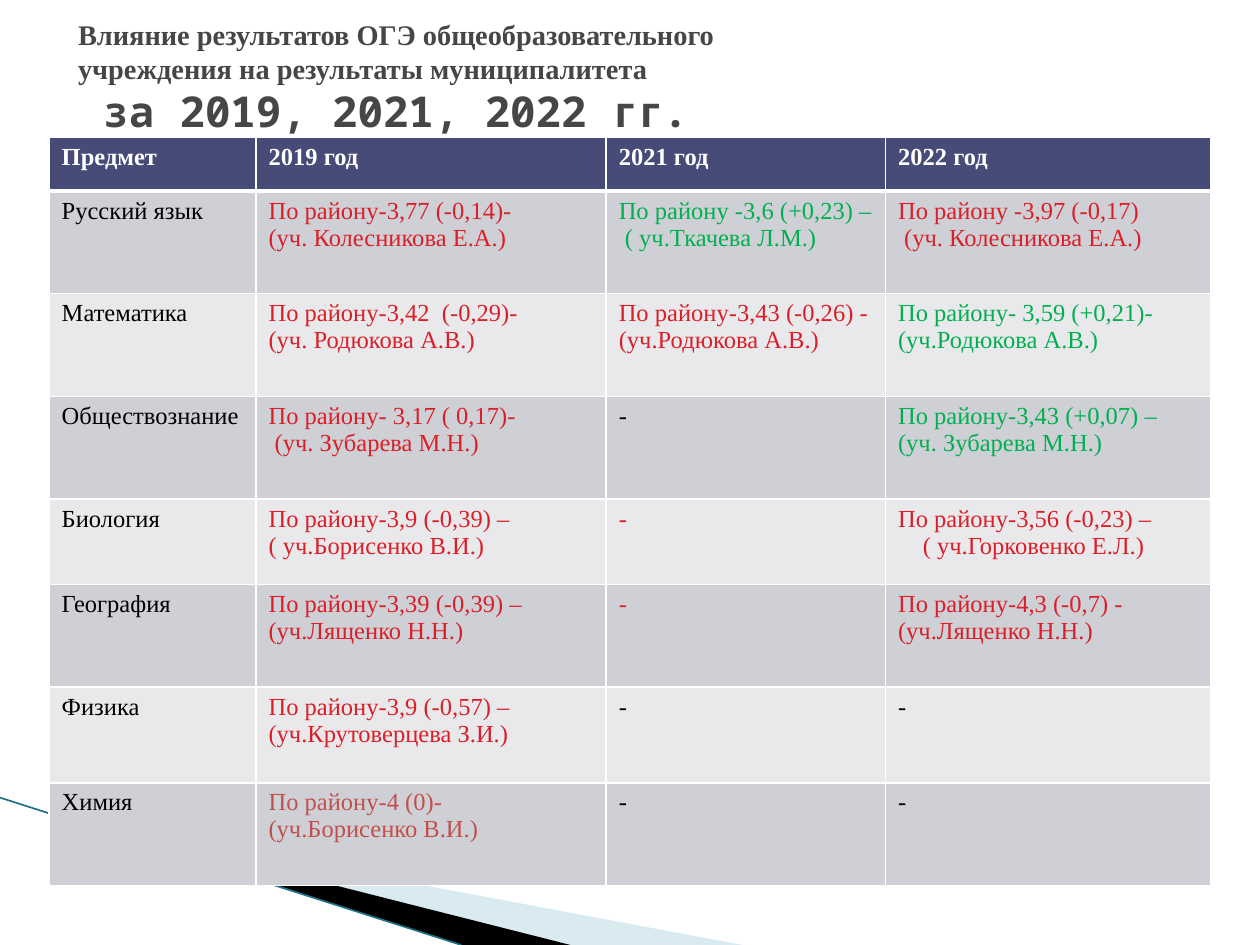
"""Builds a slide with exam results by subject for 2019, 2021 and 2022."""
from lxml import etree
from pptx import Presentation
from pptx.dml.color import RGBColor
from pptx.enum import shapes, text
from pptx.oxml.ns import qn
from pptx.util import Cm, Pt

WHITE = RGBColor(0xFF, 0xFF, 0xFF)
BLACK = RGBColor(0, 0, 0)
RED = RGBColor(0xDA, 0x1F, 0x28)
GREEN = RGBColor(0x00, 0xB0, 0x50)
BRICK = RGBColor(0xC0, 0x50, 0x4D)
GREY = RGBColor(0x46, 0x46, 0x46)
NAVY = RGBColor(0x47, 0x4B, 0x78)
BANDS = RGBColor(0xE9, 0xE9, 0xEC), RGBColor(0xCF, 0xD0, 0xD6)
SKY = RGBColor(0xA0, 0xCB, 0xDC)
TEAL = RGBColor(0x1E, 0x71, 0x86)
SERIF, MONO = "Times New Roman", "Noto Sans Mono"

NONE = ("-", BLACK)
RED_NONE = ("-", RED)
ROWS = [
    [(t, WHITE) for t in ("Предмет", "2019 год", "2021 год", "2022 год")],
    [("Русский язык", BLACK),
     ("По району-3,77 (-0,14)-\n(уч. Колесникова Е.А.)", RED),
     ("По району -3,6 (+0,23) –\n ( уч.Ткачева Л.М.)", GREEN),
     ("По району -3,97 (-0,17)\n (уч. Колесникова Е.А.)", RED)],
    [("Математика", BLACK),
     ("По району-3,42  (-0,29)-\n(уч. Родюкова А.В.)", RED),
     ("По району-3,43 (-0,26) - (уч.Родюкова А.В.)", RED),
     ("По району- 3,59 (+0,21)-(уч.Родюкова А.В.)", GREEN)],
    [("Обществознание", BLACK),
     ("По району- 3,17 ( 0,17)-\n (уч. Зубарева М.Н.)", RED),
     NONE,
     ("По району-3,43 (+0,07) –\n(уч. Зубарева М.Н.)", GREEN)],
    [("Биология", BLACK),
     ("По району-3,9 (-0,39) –\n( уч.Борисенко В.И.)", RED),
     RED_NONE,
     ("По району-3,56 (-0,23) –\n( уч.Горковенко Е.Л.)", RED)],
    [("География", BLACK),
     ("По району-3,39 (-0,39) – (уч.Лященко Н.Н.)", RED),
     RED_NONE,
     ("По району-4,3 (-0,7) -(уч.Лященко Н.Н.)", RED)],
    [("Физика", BLACK),
     ("По району-3,9 (-0,57) – (уч.Крутоверцева З.И.)", RED), NONE, NONE],
    [("Химия", BLACK),
     ("По району-4 (0)- (уч.Борисенко В.И.)", BRICK), NONE, NONE],
]
COLS = 4.17, 7.06, 5.63, 6.55
HEIGHTS = 1.08, 2.07, 2.07, 2.07, 1.72, 2.07, 1.93, 2.07


def style(p, **fmt):
    for name, value in fmt.items():
        if name == "color":
            p.font.color.rgb = value
        else:
            setattr(p.font, name, value)


def border(cell, side, width):
    ln = etree.SubElement(cell._tc.get_or_add_tcPr(), qn("a:" + side), w=str(Pt(width)))
    fill = etree.SubElement(ln, qn("a:solidFill"))
    etree.SubElement(fill, qn("a:srgbClr"), val=str(WHITE))


prs = Presentation()
prs.slide_width, prs.slide_height = Cm(25.4), Cm(19.05)
s = prs.slides.add_slide(prs.slide_layouts[5])

WEDGES = [
    (SKY, 40, (1.98, 13.89, 10.57, 4.01), [(1.4, 16.51), (14.97, 19.05), (11.48, 19.05)]),
    (BLACK, 100, (-0.15, 16.08, 10.57, 2.34), [(1.35, 16.48), (11.5, 19.05), (9.3, 19.05)]),
]
for color, alpha, box, points in WEDGES:
    points = [(Cm(x), Cm(y)) for x, y in points]
    fb = s.shapes.build_freeform(*points[0])
    fb.add_line_segments(points[1:])
    sp = fb.convert_to_shape()
    sp.shadow.inherit = False
    sp.fill.solid()
    sp.fill.fore_color.rgb = color
    sp.line.fill.background()
    clr = sp._element.spPr.find(qn("a:solidFill"))[0]
    etree.SubElement(clr, qn("a:alpha"), val=str(alpha * 1000))
    sp.left, sp.top, sp.width, sp.height = [Cm(v) for v in box]
    outline = next(sp._element.iter(qn("a:path")))
    outline.set("w", str(sp.width))
    outline.set("h", str(sp.height))
    for pt, (x, y) in zip(outline.iter(qn("a:pt")), points):
        pt.set("x", str(x - sp.left))
        pt.set("y", str(y - sp.top))

cn = s.shapes.add_connector(shapes.MSO_CONNECTOR.STRAIGHT, Cm(0), Cm(16.08), Cm(9.3), Cm(19.05))
cn.line.color.rgb = TEAL
cn.line.width = Pt(0.95)
etree.SubElement(cn._element.spPr, qn("a:effectLst"))

tbl = s.shapes.add_table(len(ROWS), len(COLS), Cm(0.99), Cm(2.77),
                         Cm(sum(COLS)), Cm(sum(HEIGHTS))).table
for col, width in zip(tbl.columns, COLS):
    col.width = Cm(width)
for i, (row, height) in enumerate(zip(ROWS, HEIGHTS)):
    tbl.rows[i].height = Cm(height)
    for j, (value, color) in enumerate(row):
        cell = tbl.cell(i, j)
        for side in ("lnL", "lnR", "lnT", "lnB"):
            thick = (i, side) in ((0, "lnB"), (1, "lnT"))
            border(cell, side, 3 if thick else 1)
        cell.fill.solid()
        cell.fill.fore_color.rgb = BANDS[i % 2] if i else NAVY
        cell.text_frame.text = value
        for p in cell.text_frame.paragraphs:
            style(p, name=SERIF, size=Pt(14), bold=i == 0, color=color)
tbl.cell(4, 3).text_frame.paragraphs[1]._p.get_or_add_pPr().set("marL", str(Cm(0.5)))

title = s.shapes.title
title.left, title.top, title.width, title.height = Cm(1.32), Cm(0.05), Cm(22.73), Cm(2.46)
tf = title.text_frame
FRAME = {"word_wrap": True, "auto_size": text.MSO_AUTO_SIZE.NONE,
         "vertical_anchor": text.MSO_ANCHOR.TOP,
         "margin_top": Cm(0.3), "margin_bottom": Cm(0)}
for name, value in FRAME.items():
    setattr(tf, name, value)
LINES = [
    ("Влияние результатов ОГЭ общеобразовательного", SERIF, 16.2, 0),
    ("учреждения на результаты муниципалитета", SERIF, 16.2, 0),
    ("за 2019, 2021, 2022 гг.", MONO, 24.3, 0.51),
]
tf.text = "\n".join(line[0] for line in LINES)
for p, (_, font, size, indent) in zip(tf.paragraphs, LINES):
    p.alignment = text.PP_ALIGN.LEFT
    p._p.get_or_add_pPr().set("marL", str(Cm(indent)))
    style(p, name=font, size=Pt(size), bold=True, color=GREY)

prs.save("out.pptx")
